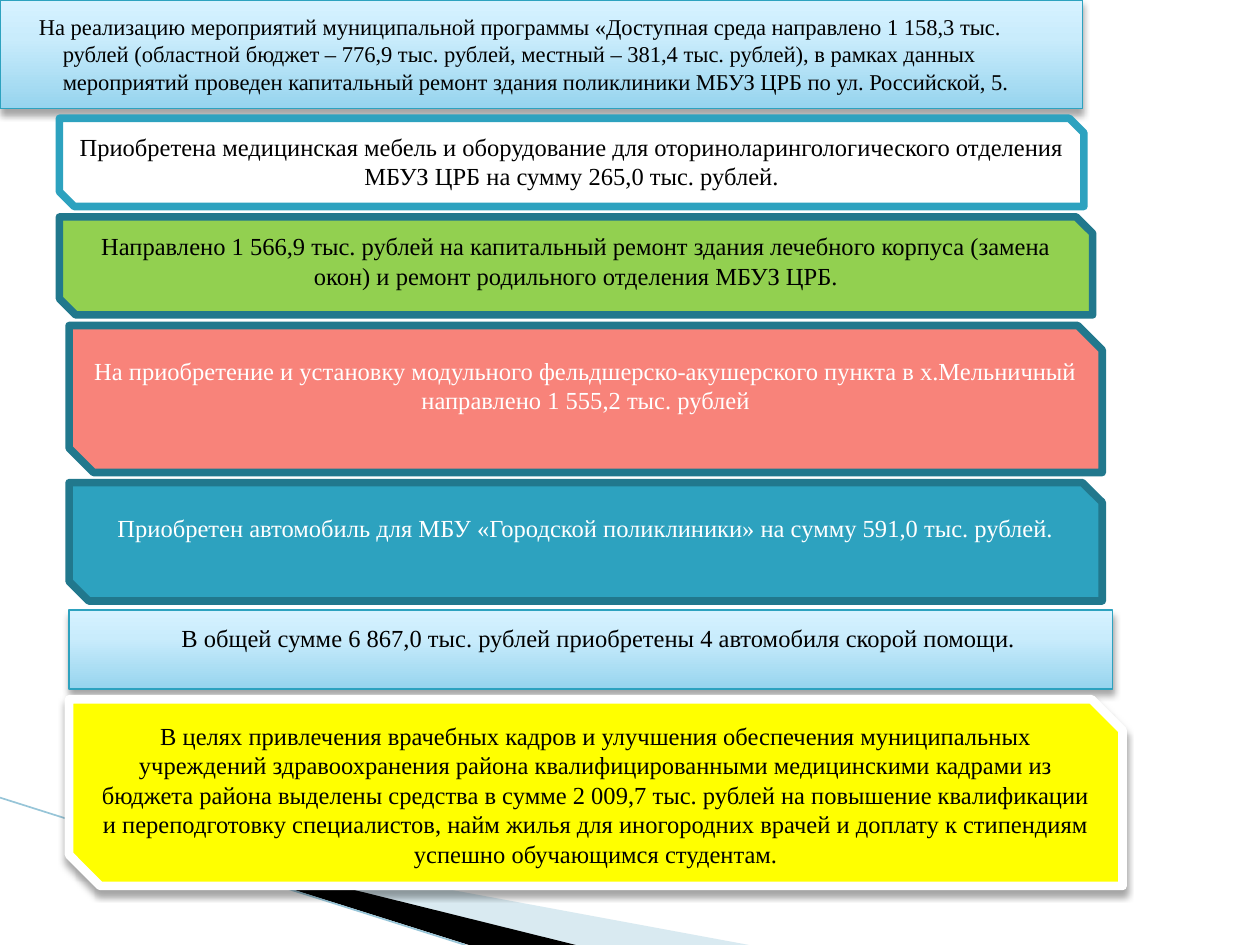
from dataclasses import dataclass
from copy import deepcopy
from lxml.etree import SubElement
from pptx import Presentation
from pptx.dml.color import RGBColor as Rgb
from pptx.enum.shapes import MSO_CONNECTOR as Conn, MSO_SHAPE as Kind
from pptx.enum.text import MSO_ANCHOR as Anchor, PP_ALIGN as Align
from pptx.oxml.ns import qn
from pptx.util import Pt


@dataclass(frozen=True)
class Theme:
    """Colours, type sizes and line widths of the slide."""
    font: str = "Times New Roman"
    size: float = 14
    lead: float = 12.9
    black: str = "000000"
    white: str = "FFFFFF"
    teal: str = "2DA2BF"
    deep: str = "21788D"
    green: str = "92D050"
    coral: str = "F8837A"
    yellow: str = "FFFF00"
    pale: str = "A0CBDC"
    rule: str = "97C5D8"
    sky: tuple = ((0, "96D4EE"), (0.65, "C9ECFC"), (1, "D7F2FF"))
    thin: float = 0.75
    thick: float = 4.33
    frame: float = 5


T = Theme()


def hue(code):
    """Turn a hex code into a colour."""
    return Rgb.from_string(code)


def paint(shape, fill, line, width):
    """Give a shape a plain fill and an outline."""
    shape.shadow.inherit = False
    shape.fill.solid()
    shape.fill.fore_color.rgb = hue(fill)
    shape.line.color.rgb = hue(line)
    shape.line.width = Pt(width)


def shade(shape, stops):
    """Fill a shape with a gradient that runs from bottom to top."""
    shape.fill.gradient()
    shape.fill.gradient_angle = 90
    group = shape._element.spPr.find(".//" + qn("a:gsLst"))
    group.append(deepcopy(group[0]))
    for stop, (place, code) in zip(shape.fill.gradient_stops, stops):
        stop.color.rgb = hue(code)
        stop.position = place


def cast(shape):
    """Drop a soft shadow below a shape."""
    effects = shape._element.spPr.find(qn("a:effectLst"))
    drop = SubElement(effects, qn("a:outerShdw"), blurRad=str(Pt(4)),
                      dist=str(Pt(3)), dir="5400000", rotWithShape="0")
    tone = SubElement(drop, qn("a:srgbClr"), val=T.black)
    SubElement(tone, qn("a:alpha"), val="35000")


def write(shape, text, color, size=T.size, align=Align.CENTER, anchor=Anchor.TOP):
    """Write one paragraph into a shape."""
    frame = shape.text_frame
    frame.word_wrap = True
    frame.vertical_anchor = anchor
    para = frame.paragraphs[0]
    para.alignment = align
    run = para.add_run()
    run.text = text
    run.font.name = T.font
    run.font.size = Pt(size)
    run.font.color.rgb = hue(color)
    return para


def band(slide, box, text, size=T.size, align=Align.CENTER, hang=20):
    """Place a gradient band with a hanging indent in the box."""
    shape = slide.shapes.add_shape(Kind.RECTANGLE, *map(Pt, box))
    paint(shape, T.white, T.teal, T.thin)
    shade(shape, T.sky)
    cast(shape)
    para = write(shape, text, T.black, size, align)
    props = para._p.get_or_add_pPr()
    props.set("marL", str(Pt(28.8)))
    props.set("indent", str(-Pt(hang)))
    shape.text_frame.margin_top = Pt(7.6)


def card(slide, box, text, fill, line, ink=T.black, width=T.thick, lift=0):
    """Place a card with snipped corners in the box, its text raised by lift."""
    shape = slide.shapes.add_shape(Kind.SNIP_2_DIAG_RECTANGLE, *map(Pt, box))
    paint(shape, fill, line, width)
    write(shape, text, ink, anchor=Anchor.MIDDLE if lift else Anchor.TOP)
    shape.text_frame.margin_bottom = Pt(3.6 + 2 * lift)
    return shape


def wedge(slide, points, color):
    """Draw a filled wedge through the points and return its colour node."""
    first, *rest = points
    pen = slide.shapes.build_freeform(*first, scale=Pt(1))
    pen.add_line_segments(rest, close=True)
    shape = pen.convert_to_shape()
    paint(shape, color, color, T.thin)
    shape.line.fill.background()
    return shape._element.spPr.find(qn("a:solidFill"))[0]


def decor(slide, box):
    """Draw the sweep in the lower left corner, within the box."""
    left, top, right, base = box
    tone = wedge(slide, [(left, top), (428, base), (328, base)], T.pale)
    SubElement(tone, qn("a:alpha"), val="40000")
    wedge(slide, [(left, top), (right, base), (268, base)], T.black)
    line = slide.shapes.add_connector(
        Conn.STRAIGHT, Pt(0), Pt(455.8), Pt(266), Pt(base))
    line.line.color.rgb = hue(T.rule)
    line.line.width = Pt(0.95)
    SubElement(line._element.spPr, qn("a:effectLst"))


def health(slide):
    """Place all measures of the health programme from top to bottom."""
    decor(slide, (39, 468, 329, 540))
    band(slide, (0, 0, 618.5, 62),
         "На реализацию мероприятий муниципальной программы «Доступная среда "
         "направлено 1 158,3 тыс. рублей (областной бюджет – 776,9 тыс. рублей, "
         "местный – 381,4 тыс. рублей), в рамках данных мероприятий проведен "
         "капитальный ремонт здания поликлиники МБУЗ ЦРБ по ул. Российской, 5.",
         T.lead, Align.LEFT, 13.7)
    card(slide, (34, 67.6, 585.4, 50.4),
         "Приобретена медицинская мебель и оборудование для "
         "оториноларингологического отделения МБУЗ ЦРБ на сумму "
         "265,0 тыс. рублей.", T.white, T.teal)
    card(slide, (34, 124, 590.4, 56),
         "Направлено 1 566,9 тыс. рублей на капитальный ремонт здания "
         "лечебного корпуса (замена окон) и ремонт родильного отделения "
         "МБУЗ ЦРБ.", T.green, T.deep)
    card(slide, (39.5, 186, 590.4, 84),
         "На приобретение и установку модульного фельдшерско-акушерского "
         "пункта в х.Мельничный направлено 1 555,2 тыс. рублей",
         T.coral, T.deep, T.white, lift=8)
    card(slide, (39.5, 275.8, 590.4, 67.6),
         "Приобретен автомобиль для МБУ «Городской поликлиники» на сумму "
         "591,0 тыс. рублей.", T.teal, T.deep, T.white, lift=8)
    band(slide, (39.5, 348.6, 596.2, 45.2),
         "В общей сумме 6 867,0 тыс. рублей приобретены 4 автомобиля "
         "скорой помощи.")
    last = card(slide, (39.5, 399.6, 602, 106.6),
                "В целях привлечения врачебных кадров и улучшения обеспечения "
                "муниципальных учреждений здравоохранения района "
                "квалифицированными медицинскими кадрами из бюджета района "
                "выделены средства в сумме 2 009,7 тыс. рублей на повышение "
                "квалификации и переподготовку специалистов, найм жилья для "
                "иногородних врачей и доплату к стипендиям успешно обучающимся "
                "студентам.", T.yellow, T.white, width=T.frame)
    cast(last)


def main():
    """Build and save the slide."""
    deck = Presentation()
    deck.slide_width, deck.slide_height = Pt(720), Pt(540)
    health(deck.slides.add_slide(deck.slide_layouts[6]))
    deck.save("out.pptx")


if __name__ == "__main__":
    main()
